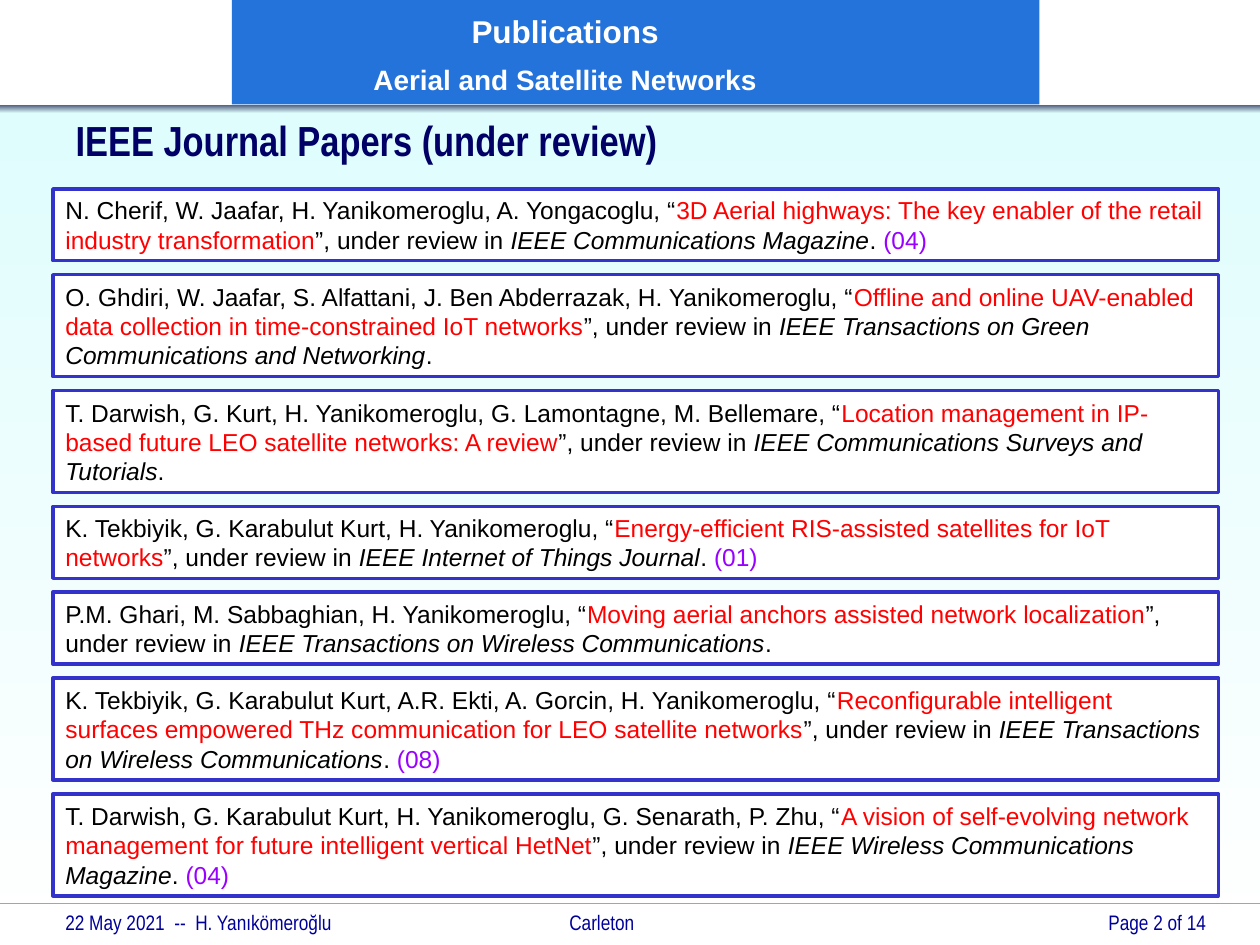
from lxml.etree import SubElement
from pptx import Presentation
from pptx.dml.color import RGBColor
from pptx.enum.shapes import MSO_CONNECTOR, MSO_SHAPE
from pptx.enum.text import MSO_ANCHOR, PP_ALIGN
from pptx.oxml.ns import qn
from pptx.util import Inches, Pt

WHITE = RGBColor(0xFF, 0xFF, 0xFF)
BLACK = RGBColor(0, 0, 0)
RED = RGBColor(0xFF, 0, 0)
PURPLE = RGBColor(0x99, 0, 0xFF)
NAVY = RGBColor(0, 0, 0x66)
INK = RGBColor(0, 0, 0x99)
BORDER = RGBColor(0x33, 0x33, 0xCC)
BANNER = RGBColor(0x24, 0x73, 0xDB)
MIST = RGBColor(0xDF, 0xFD, 0xFD)
SLATE = RGBColor(0x47, 0x55, 0x77)
GREEN = RGBColor(0x99, 0xCC, 0)

# Authors, title, journal, count of citations shown, lines of text
PAPERS = [
    ("N. Cherif, W. Jaafar, H. Yanikomeroglu, A. Yongacoglu",
     "3D Aerial highways: The key enabler of the retail industry transformation",
     "IEEE Communications Magazine", "(04)", 2),
    ("O. Ghdiri, W. Jaafar, S. Alfattani, J. Ben Abderrazak, H. Yanikomeroglu",
     "Offline and online UAV-enabled data collection in time-constrained IoT networks",
     "IEEE Transactions on Green Communications and Networking", "", 3),
    ("T. Darwish, G. Kurt, H. Yanikomeroglu, G. Lamontagne, M. Bellemare",
     "Location management in IP-based future LEO satellite networks: A review",
     "IEEE Communications Surveys and Tutorials", "", 3),
    ("K. Tekbiyik, G. Karabulut Kurt, H. Yanikomeroglu",
     "Energy-efficient RIS-assisted satellites for IoT networks",
     "IEEE Internet of Things Journal", "(01)", 2),
    ("P.M. Ghari, M. Sabbaghian, H. Yanikomeroglu",
     "Moving aerial anchors assisted network localization",
     "IEEE Transactions on Wireless Communications", "", 2),
    ("K. Tekbiyik, G. Karabulut Kurt, A.R. Ekti, A. Gorcin, H. Yanikomeroglu",
     "Reconfigurable intelligent surfaces empowered THz communication "
     "for LEO satellite networks",
     "IEEE Transactions on Wireless Communications", "(08)", 3),
    ("T. Darwish, G. Karabulut Kurt, H. Yanikomeroglu, G. Senarath, P. Zhu",
     "A vision of self-evolving network management for future intelligent "
     "vertical HetNet",
     "IEEE Wireless Communications Magazine", "(04)", 3),
]
HEIGHTS = {2: 0.57, 3: 0.81}
GAP = 0.11


def add_run(para, text, size, color, face="Arial", bold=False, italic=False):
    run = para.add_run()
    run.text = text
    font = run.font
    font.name, font.size, font.bold, font.italic = face, Pt(size), bold, italic
    font.color.rgb = color


def add_rect(slide, left, top, width, height, fill=WHITE):
    box = slide.shapes.add_shape(MSO_SHAPE.RECTANGLE, Inches(left), Inches(top),
                                 Inches(width), Inches(height))
    box.shadow.inherit = False
    box.line.fill.background()
    box.fill.solid()
    box.fill.fore_color.rgb = fill
    return box


def add_fade(slide, top, height, start, end):
    fill = add_rect(slide, 0, top, 10, height).fill
    fill.gradient()
    fill.gradient_angle = 270
    for stop, color, place in zip(fill.gradient_stops, (start, end), (0, 1)):
        stop.color.rgb = color
        stop.position = place


def add_banner(slide):
    frame = add_rect(slide, 1.84, 0, 6.41, 0.83, BANNER).text_frame
    frame.vertical_anchor = MSO_ANCHOR.MIDDLE
    # The wide right margin moves the centred text to the left
    frame.margin_left, frame.margin_right = 0, Inches(1.12)
    first, second = frame.paragraphs[0], frame.add_paragraph()
    second.space_before = Pt(5)
    for para, text, size in ((first, "Publications", 18),
                             (second, "Aerial and Satellite Networks", 16)):
        para.alignment = PP_ALIGN.CENTER
        para.line_spacing = 1.1
        add_run(para, text, size, WHITE, bold=True)


def add_title(slide, text):
    title = slide.shapes.title
    title.left, title.top = Inches(0.5), Inches(0.9)
    title.width, title.height = Inches(8.5), Inches(0.42)
    frame = title.text_frame
    frame.vertical_anchor = MSO_ANCHOR.MIDDLE
    para = frame.paragraphs[0]
    para.alignment = PP_ALIGN.LEFT
    add_run(para, text, 24, NAVY, "Arial Narrow", bold=True)


def add_paper(slide, top, height, authors, name, journal, count):
    box = add_rect(slide, 0.42, top, 9.25, height)
    box.line.color.rgb = BORDER
    box.line.width = Pt(2)
    frame = box.text_frame
    frame.word_wrap = True
    frame.vertical_anchor = MSO_ANCHOR.MIDDLE
    para = frame.paragraphs[0]
    para.alignment = PP_ALIGN.LEFT
    add_run(para, f"{authors}, “", 14, BLACK)
    add_run(para, name, 14, RED)
    add_run(para, "”, under review in ", 14, BLACK)
    add_run(para, journal, 14, BLACK, italic=True)
    add_run(para, ". " if count else ".", 14, BLACK)
    if count:
        add_run(para, count, 14, PURPLE)


def add_note(slide, left, width, text, align=PP_ALIGN.LEFT):
    box = slide.shapes.add_textbox(Inches(left), Inches(7.17),
                                   Inches(width), Inches(0.3))
    box.text_frame.word_wrap = True
    para = box.text_frame.paragraphs[0]
    para.alignment = align
    add_run(para, text, 12, INK, "Arial Narrow")


def add_footer(slide):
    rule = slide.shapes.add_connector(MSO_CONNECTOR.STRAIGHT, 0, Inches(7.17),
                                      Inches(10), Inches(7.17))
    rule.line.color.rgb = GREEN
    rule.line.width = Pt(0.75)
    SubElement(rule.line._get_or_add_ln().getparent(), qn("a:effectLst"))
    add_note(slide, 0.42, 3.5, "22 May 2021  --  H. Yanıkömeroğlu")
    add_note(slide, 4.42, 1.5, "Carleton")
    add_note(slide, 7.5, 2.17, "Page 2 of 14", PP_ALIGN.RIGHT)


def main():
    deck = Presentation()
    deck.slide_width, deck.slide_height = Inches(10), Inches(7.5)
    slide = deck.slides.add_slide(deck.slide_layouts[5])

    # Backdrop, footer and header
    add_fade(slide, 0.86, 6.64, MIST, WHITE)
    add_footer(slide)
    add_fade(slide, 0.83, 0.07, SLATE, MIST)
    add_banner(slide)

    # Title, raised above the backdrop
    add_title(slide, "IEEE Journal Papers (under review)")
    tree = slide.shapes.title.element.getparent()
    tree.append(slide.shapes.title.element)

    # Stack of papers
    top = 1.5
    for *parts, lines in PAPERS:
        add_paper(slide, top, HEIGHTS[lines], *parts)
        top += HEIGHTS[lines] + GAP

    deck.save("out.pptx")


if __name__ == "__main__":
    main()
